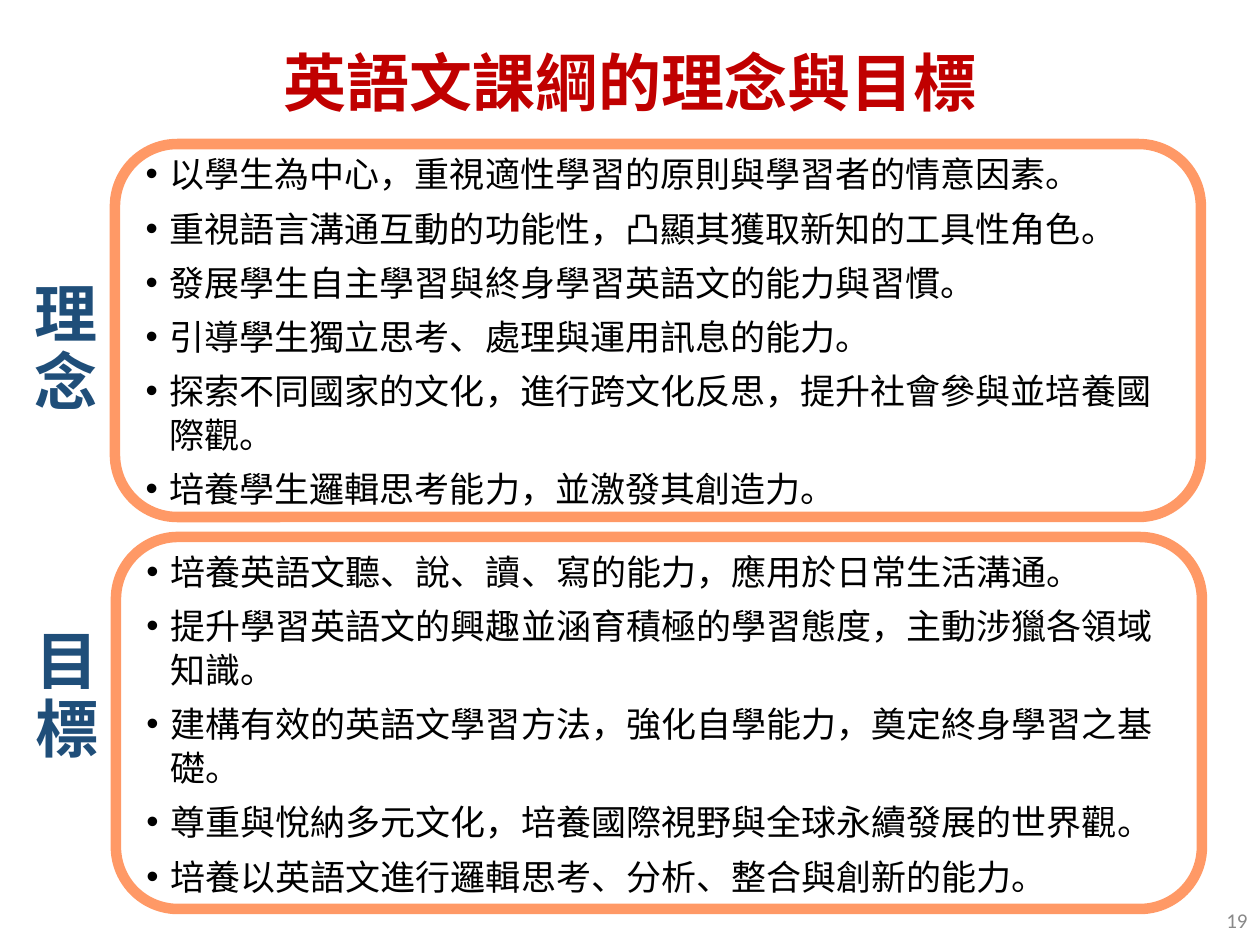
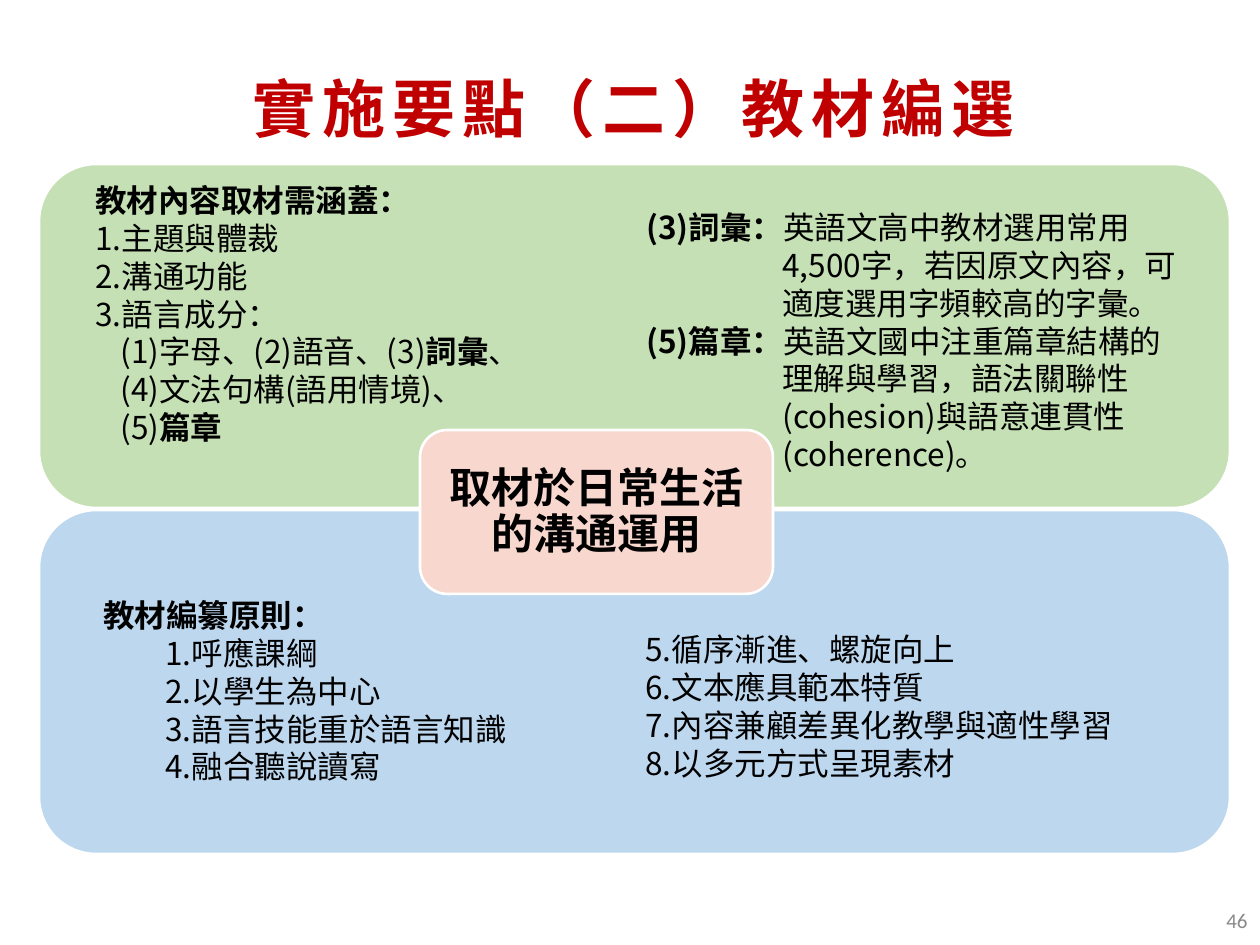
import pptx
import pptx.util
import pptx.dml.color
import pptx.enum.shapes
import pptx.enum.text
import pptx.oxml.ns
import lxml.etree

# Shared look
EMU_PER_PX = 914400 / 126
PAGE_SIZE = (1260, 945)
CJK_FONT, NUMBER_FONT = "Noto Sans CJK SC", "Calibri"
RED, NAVY, BLACK, GREY, WHITE = "C00000", "1F4E79", "000000", "898989", "FFFFFF"
ORANGE, GREEN, BLUE, PINK = "FF9966", "C5E0B4", "BDD7EE", "F8D7CE"
TITLE_WIDTH = 1086
NUMBER_AREA = (976, 895, 284, 50)
SHAPES = pptx.enum.shapes.MSO_SHAPE
ALIGN = pptx.enum.text.PP_ALIGN
ANCHOR = pptx.enum.text.MSO_ANCHOR

# Slide 1: label, frame area, label area, points
IDEAS = [
    ("目標", (116, 537, 1086, 372), (10, 607, 115, 180), [
        "培養英語文聽、說、讀、寫的能力，應用於日常生活溝通。",
        "提升學習英語文的興趣並涵育積極的學習態度，主動涉獵各領域知識。",
        "建構有效的英語文學習方法，強化自學能力，奠定終身學習之基礎。",
        "尊重與悅納多元文化，培養國際視野與全球永續發展的世界觀。",
        "培養以英語文進行邏輯思考、分析、整合與創新的能力。",
    ]),
    ("理念", (115, 144, 1086, 373), (9, 260, 115, 180), [
        "以學生為中心，重視適性學習的原則與學習者的情意因素。",
        "重視語言溝通互動的功能性，凸顯其獲取新知的工具性角色。",
        "發展學生自主學習與終身學習英語文的能力與習慣。",
        "引導學生獨立思考、處理與運用訊息的能力。",
        "探索不同國家的文化，進行跨文化反思，提升社會參與並培養國際觀。",
        "培養學生邏輯思考能力，並激發其創造力。",
    ]),
]

# Slide 2: text between asterisks is bold; each line has (margin, indent, text)
PANELS = [(BLUE, (39, 510, 1191, 344)), (GREEN, (39, 164, 1191, 344))]
CORE_AREA = (420, 430, 353, 164)
CORE_LINES = ["*取材於日常生活*", "*的溝通運用*"]
MATERIALS = [
    ((83, 175, 512, 280), [
        (0, 0, "*教材內容取材需涵蓋：*"),
        (0, 0, "1.主題與體裁"),
        (0, 0, "2.溝通功能"),
        (25, -25, "3.語言成分：\n(1)字母、(2)語音、(3)*詞彙*、\n"
                  "(4)文法句構(語用情境)、\n(5)*篇章*"),
    ]),
    ((634, 202, 568, 280), [
        (136, -136, "*(3)詞彙：*英語文高中教材選用常用4,500字，"
                    "若因原文內容，可適度選用字頻較高的字彙。"),
        (136, -136, "*(5)篇章：*英語文國中注重篇章結構的理解與學習，"
                    "語法關聯性(cohesion)與語意連貫性(coherence)。"),
    ]),
    ((91, 590, 538, 204), [
        (0, 0, "*教材編纂原則：*"),
        (0, 62, "1.呼應課綱"),
        (0, 62, "2.以學生為中心"),
        (0, 62, "3.語言技能重於語言知識"),
        (0, 62, "4.融合聽說讀寫"),
    ]),
    ((633, 624, 499, 165), [
        (0, 0, "5.循序漸進、螺旋向上"),
        (0, 0, "6.文本應具範本特質"),
        (0, 0, "7.內容兼顧差異化教學與適性學習"),
        (0, 0, "8.以多元方式呈現素材"),
    ]),
]


def px(length):
    return pptx.util.Emu(round(length * EMU_PER_PX))


def color(value):
    return pptx.dml.color.RGBColor.from_string(value)


def add_child(parent, tag, **attributes):
    return lxml.etree.SubElement(parent, pptx.oxml.ns.qn(tag), **attributes)


def add_panel(page, kind, area, fill, line, line_width):
    panel = page.shapes.add_shape(kind, *map(px, area))
    panel.shadow.inherit = False
    panel.fill.solid()
    panel.fill.fore_color.rgb = color(fill)
    panel.line.color.rgb = color(line)
    panel.line.width = pptx.util.Pt(line_width)
    return panel


def add_span(para, text, size, ink, bold, font, tracking):
    span = para.add_run()
    span.text = text
    span.font.size = pptx.util.Pt(size)
    span.font.bold = bold
    span.font.color.rgb = color(ink)
    span.font.name = font
    properties = span.font._element
    add_child(properties, "a:ea", typeface=font)
    if tracking:
        properties.set("spc", str(tracking * 100))


def write(box, lines, size, ink=BLACK, align=ALIGN.LEFT, anchor=ANCHOR.MIDDLE,
          font=CJK_FONT, tracking=0, pitch=None, gap=0, bullet=None, insets=None):
    """Fill a box with (margin, indent, marked text) lines."""
    frame = box.text_frame
    frame.word_wrap = True
    frame.vertical_anchor = anchor
    if insets:
        frame.margin_left = frame.margin_right = px(insets[0])
        frame.margin_top = frame.margin_bottom = px(insets[1])
    for index, (margin, indent, text) in enumerate(lines):
        para = frame.add_paragraph() if index else frame.paragraphs[0]
        para.alignment = align
        if pitch:
            para.line_spacing = pptx.util.Pt(pitch)
        if index and gap:
            para.space_before = pptx.util.Pt(gap)
        properties = para._p.get_or_add_pPr()
        properties.set("marL", str(px(margin)))
        properties.set("indent", str(px(indent)))
        if bullet:
            add_child(properties, "a:buFont", typeface="Arial")
            add_child(properties, "a:buChar", char=bullet)
        for part, marked in enumerate(text.split("*")):
            for row, piece in enumerate(marked.split("\n")):
                if row:
                    para.add_line_break()
                if piece:
                    add_span(para, piece, size, ink, part % 2 == 1, font, tracking)


def add_text(page, area, lines, size, **style):
    box = page.shapes.add_textbox(*map(px, area))
    write(box, lines, size, **style)


def add_page(deck, title, title_area, number, tracking=0):
    page = deck.slides.add_slide(deck.slide_layouts[6])
    add_text(page, title_area, [(0, 0, f"*{title}*")], 36, ink=RED,
             align=ALIGN.CENTER, tracking=tracking)
    add_text(page, NUMBER_AREA, [(0, 0, number)], 12, ink=GREY,
             align=ALIGN.RIGHT, font=NUMBER_FONT)
    return page


def build_ideas(deck):
    page = add_page(deck, "英語文課綱的理念與目標", (87, 20, TITLE_WIDTH, 123), "19")
    for label, frame_area, label_area, points in IDEAS:
        frame = add_panel(page, SHAPES.FLOWCHART_ALTERNATE_PROCESS,
                          frame_area, WHITE, ORANGE, 6)
        write(frame, [(24, -24, point) for point in points], 20,
              pitch=25, gap=6, bullet="•")
        add_text(page, label_area, [(0, 0, f"*{label}*")], 36, ink=NAVY,
                 align=ALIGN.CENTER, pitch=39, insets=(19, 9))


def build_materials(deck):
    page = add_page(deck, "實施要點（二）教材編選", (91, 52, TITLE_WIDTH, 111), "46",
                    tracking=4)
    for fill, area in PANELS:
        add_panel(page, SHAPES.ROUNDED_RECTANGLE, area, fill, WHITE, 1.5)
    core = add_panel(page, SHAPES.ROUNDED_RECTANGLE, CORE_AREA, PINK, WHITE, 1.5)
    write(core, [(0, 0, line) for line in CORE_LINES], 24,
          align=ALIGN.CENTER, pitch=26, insets=(13, 13))
    for area, lines in MATERIALS:
        add_text(page, area, lines, 18, anchor=ANCHOR.TOP, pitch=21.6)


def main():
    deck = pptx.Presentation()
    deck.slide_width, deck.slide_height = map(px, PAGE_SIZE)
    build_ideas(deck)
    build_materials(deck)
    deck.save("out.pptx")


if __name__ == "__main__":
    main()
